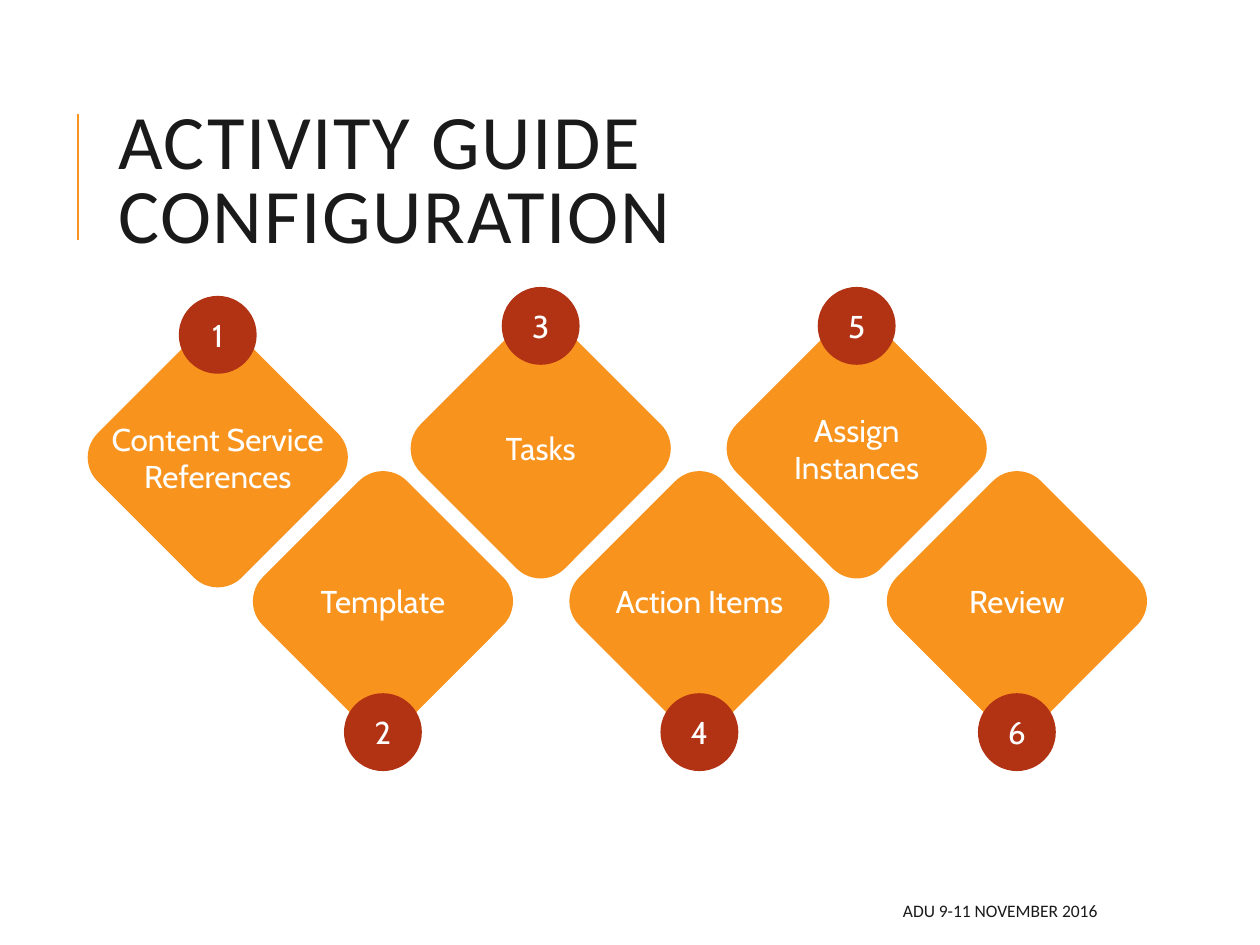
from dataclasses import dataclass

import pptx
import pptx.dml.color
import pptx.enum.shapes
import pptx.enum.text
import pptx.oxml.ns
import pptx.util
from lxml import etree

Cm, Pt = pptx.util.Cm, pptx.util.Pt
MSO_SHAPE = pptx.enum.shapes.MSO_SHAPE
ALIGN = pptx.enum.text.PP_ALIGN
MIDDLE = pptx.enum.text.MSO_ANCHOR.MIDDLE

ORANGE, RED, WHITE, INK = "F8931D", "B23214", "FFFFFF", "1A1A1A"
DIAMOND, BADGE = 4.11, 1.57  # side and diameter, cm
LABEL_W, LINE_H = 5.28, 0.78
BADGE_ABOVE, BADGE_BELOW = -2.47, 2.64  # badge centre from diamond centre


@dataclass
class Step:
    cx: float
    cy: float
    label: str
    lines: int = 1


STEPS = [
    Step(4.39, 9.22, "Content Service References", 2),
    Step(7.72, 12.12, "Template"),
    Step(10.9, 9.04, "Tasks"),
    Step(14.1, 12.12, "Action Items"),
    Step(17.27, 9.04, "Assign\nInstances", 2),
    Step(20.5, 12.12, "Review"),
]


def rgb(color: str) -> pptx.dml.color.RGBColor:
    return pptx.dml.color.RGBColor.from_string(color)


def box(cx: float, cy: float, w: float, h: float) -> tuple:
    """Left, top, width and height of a box given by its centre in cm."""
    return Cm(cx - w / 2), Cm(cy - h / 2), Cm(w), Cm(h)


def write(sp, text: str, size: float, font: str, color: str, align) -> None:
    tf = sp.text_frame
    tf.text = text
    tf.word_wrap = True
    tf.vertical_anchor = MIDDLE
    for p in tf.paragraphs:
        p.alignment = align
        p.font.size = Pt(size)
        p.font.name = font
        p.font.color.rgb = rgb(color)


def add_solid(slide, kind, bounds: tuple, color: str):
    sp = slide.shapes.add_shape(kind, *bounds)
    sp.shadow.inherit = False
    sp.fill.solid()
    sp.fill.fore_color.rgb = rgb(color)
    sp.line.fill.background()
    return sp


def add_step(slide, number: int, step: Step) -> None:
    diamond = add_solid(slide, MSO_SHAPE.ROUNDED_RECTANGLE,
                        box(step.cx, step.cy, DIAMOND, DIAMOND), ORANGE)
    diamond.rotation = 45

    offset = BADGE_ABOVE if number % 2 else BADGE_BELOW
    badge = add_solid(slide, MSO_SHAPE.OVAL,
                      box(step.cx, step.cy + offset, BADGE, BADGE), RED)
    write(badge, str(number), 18, "Cabin", WHITE, ALIGN.CENTER)

    label = slide.shapes.add_textbox(
        *box(step.cx, step.cy, LABEL_W, 0.25 + LINE_H * step.lines))
    write(label, step.label, 18, "Cabin", WHITE, ALIGN.CENTER)


def add_title(slide, text: str) -> None:
    title = slide.shapes.title
    title.left, title.top, title.width, title.height = Cm(2.13), Cm(1.63), Cm(20.24), Cm(4.17)
    write(title, text, 44, "Calibri", INK, ALIGN.LEFT)
    title.text_frame.auto_size = pptx.enum.text.MSO_AUTO_SIZE.NONE
    p = title.text_frame.paragraphs[0]
    p.line_spacing = 0.8
    p.runs[0].font._element.set("spc", "100")


def add_title_rule(slide) -> None:
    rule = slide.shapes.add_connector(pptx.enum.shapes.MSO_CONNECTOR.STRAIGHT,
                                      Cm(1.57), Cm(4.83), Cm(1.57), Cm(2.29))
    rule.line.color.rgb = rgb(ORANGE)
    rule.line.width = Pt(1.5)
    etree.SubElement(rule._element.spPr, pptx.oxml.ns.qn("a:effectLst"))


def main() -> None:
    prs = pptx.Presentation()
    prs.slide_width, prs.slide_height = Cm(25.4), Cm(19.05)
    slide = prs.slides.add_slide(prs.slide_layouts[5])

    add_title_rule(slide)
    add_title(slide, "ACTIVITY GUIDE CONFIGURATION")
    for number, step in enumerate(STEPS, 1):
        add_step(slide, number, step)
    footer = slide.shapes.add_textbox(Cm(10.08), Cm(17.98), Cm(12.29), Cm(0.76))
    write(footer, "ADU 9-11 NOVEMBER 2016", 10, "Calibri", INK, ALIGN.RIGHT)

    prs.save("out.pptx")


if __name__ == "__main__":
    main()
